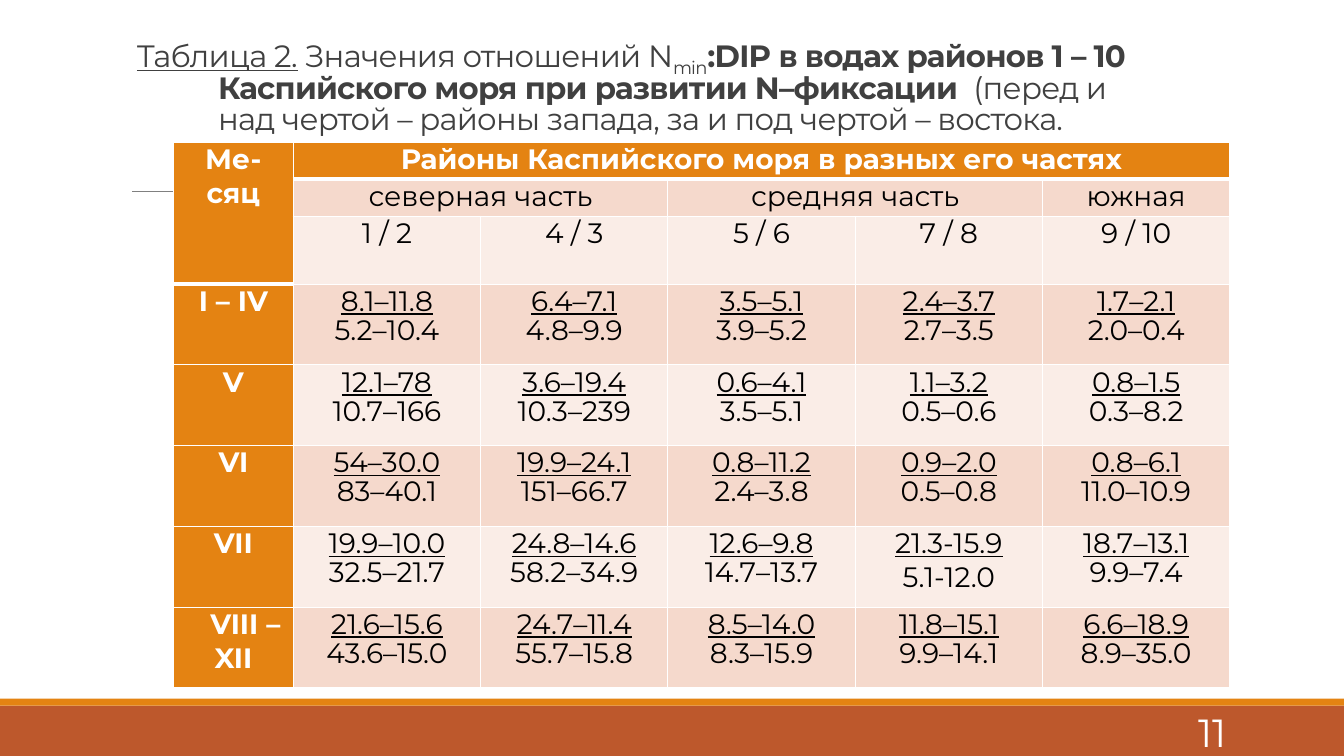
from lxml.etree import SubElement as Sub
from pptx import Presentation
from pptx.dml.color import RGBColor as RGB
from pptx.enum.shapes import MSO_CONNECTOR as Link, MSO_SHAPE as Shape
from pptx.enum.text import MSO_ANCHOR as Anchor, PP_ALIGN as Align
from pptx.oxml import parse_xml
from pptx.oxml.ns import nsdecls, qn
from pptx.util import Pt

WHITE = RGB(0xFF, 0xFF, 0xFF)
BLACK = RGB(0, 0, 0)
DARK = RGB(0x40, 0x40, 0x40)
GRAY = RGB(0x80, 0x80, 0x80)
RUST = RGB(0xBD, 0x58, 0x2C)
ORANGE = RGB(0xE4, 0x83, 0x12)
BANDS = [RGB(0xFA, 0xED, 0xE7), RGB(0xF5, 0xD9, 0xCC)]

FONT = "Montserrat"
HEAD = {"size": Pt(20), "bold": True}
BODY = {"size": Pt(20), "bold": False}
TITLE = {"size": Pt(22)}

PARTS = [("северная часть", 2), ("средняя часть", 2), ("южная", 1)]
PAIRS = ["1 / 2", "4 / 3", "5 / 6", "7 / 8", "9 / 10"]
# Each value: west over east
MONTHS = {
    "I – IV": ["8.1–11.8/5.2–10.4", "6.4–7.1/4.8–9.9", "3.5–5.1/3.9–5.2",
               "2.4–3.7/2.7–3.5", "1.7–2.1/2.0–0.4"],
    "V": ["12.1–78/10.7–166", "3.6–19.4/10.3–239", "0.6–4.1/3.5–5.1",
          "1.1–3.2/0.5–0.6", "0.8–1.5/0.3–8.2"],
    "VI": ["54–30.0/83–40.1", "19.9–24.1/151–66.7", "0.8–11.2/2.4–3.8",
           "0.9–2.0/0.5–0.8", "0.8–6.1/11.0–10.9"],
    "VII": ["19.9–10.0/32.5–21.7", "24.8–14.6/58.2–34.9",
            "12.6–9.8/14.7–13.7", "21.3-15.9/5.1-12.0",
            "18.7–13.1/9.9–7.4"],
    "VIII –XII": ["21.6–15.6/43.6–15.0", "24.7–11.4/55.7–15.8",
                  "8.5–14.0/8.3–15.9", "11.8–15.1/9.9–14.1",
                  "6.6–18.9/8.9–35.0"],
}


def add_run(para, text, color, style, **more):
    run = para.add_run()
    run.text = text
    run.font.name = FONT
    run.font.color.rgb = color
    for key, val in {**style, **more}.items():
        setattr(run.font, key, val)
    return run


def add_box(slide, box, anchor):
    frame = slide.shapes.add_textbox(*map(Pt, box)).text_frame
    frame.word_wrap = True
    frame.vertical_anchor = anchor
    return frame.paragraphs[0]


def add_title(slide, box):
    para = add_box(slide, box, Anchor.BOTTOM)
    para.line_spacing = 0.85
    props = para._p.get_or_add_pPr()
    props.set("marL", str(Pt(58)))
    props.set("indent", str(-Pt(58)))
    lines = [
        [("Таблица 2.", {"underline": True}),
         (" Значения отношений N", {}), ("min", {"sub": True}),
         (":DIP в водах районов 1 – 10", {"bold": True})],
        [("Каспийского моря при развитии N–фиксации ", {"bold": True}),
         (" (перед и", {})],
        [("над чертой – районы запада, за и под чертой – востока.", {})],
    ]
    for num, line in enumerate(lines):
        if num:
            para.add_line_break()
        for text, look in line:
            sub = look.pop("sub", False)
            props = add_run(para, text, DARK, TITLE, **look)._r.get_or_add_rPr()
            props.set("spc", "-50")
            if sub:
                props.set("baseline", "-25000")


def add_rule(slide, left, top, width):
    line = slide.shapes.add_connector(
        Link.STRAIGHT, Pt(left), Pt(top), Pt(left + width), Pt(top))
    line.line.color.rgb = GRAY
    line.line.width = Pt(0.5)
    Sub(line._element.spPr, qn("a:effectLst"))


def add_footer(slide, box, number):
    left, top, width, height = box
    for y, deep, color in [(top + 5, height - 5, RUST), (top, 5, ORANGE)]:
        bar = slide.shapes.add_shape(
            Shape.RECTANGLE, Pt(left), Pt(y), Pt(width), Pt(deep))
        bar.shadow.inherit = False
        bar.fill.solid()
        bar.fill.fore_color.rgb = color
        bar.line.fill.background()
    para = add_box(slide, (left + 780, top + 9, 103, 29), Anchor.MIDDLE)
    para.alignment = Align.RIGHT
    add_run(para, number, WHITE, {"size": Pt(28)})


def set_edges(cell, thick):
    props = cell._tc.get_or_add_tcPr()
    for pos, side in enumerate("LRTB"):
        wide = Pt(3 if thick and side == "B" else 1)
        props.insert(pos, parse_xml(
            f'<a:ln{side} {nsdecls("a")} w="{wide}"><a:solidFill>'
            f'<a:srgbClr val="{WHITE}"/></a:solidFill></a:ln{side}>'))


def fill_cell(cell, text, color, style):
    # A slash without spaces parts the upper value from the lower
    lines = text.split("/") if " / " not in text else [text]
    frame = cell.text_frame
    for num, line in enumerate(lines):
        para = frame.add_paragraph() if num else frame.paragraphs[0]
        para.alignment = Align.CENTER
        if num and "–" in line:
            para.line_spacing = 0.8
        add_run(para, line, color, style,
                underline=len(lines) > 1 and num == 0)


def add_grid(slide, box):
    cols = [85.5] + [133.8] * len(PAIRS)
    rows = [26.5, 26.5, 48.5] + [57.7] * len(MONTHS)
    grid = slide.shapes.add_table(
        len(rows), len(cols), *map(Pt, box)).table
    for col, width in zip(grid.columns, cols):
        col.width = Pt(width)
    for row, height in zip(grid.rows, rows):
        row.height = Pt(height)

    # Fills, margins and borders
    for r in range(len(rows)):
        for c in range(len(cols)):
            cell = grid.cell(r, c)
            cell.margin_left = cell.margin_right = Pt(5.4)
            cell.margin_top = cell.margin_bottom = 0
            cell.fill.solid()
            head = r == 0 or c == 0
            cell.fill.fore_color.rgb = ORANGE if head else BANDS[r % 2]
            set_edges(cell, r == 0 or (c == 0 and r < 3))

    # Header rows
    grid.cell(0, 0).merge(grid.cell(2, 0))
    grid.cell(0, 1).merge(grid.cell(0, len(PAIRS)))
    fill_cell(grid.cell(0, 0), "Ме-сяц", WHITE, HEAD)
    fill_cell(grid.cell(0, 1), "Районы Каспийского моря в разных его частях",
              WHITE, HEAD)
    c = 1
    for text, span in PARTS:
        if span > 1:
            grid.cell(1, c).merge(grid.cell(1, c + span - 1))
        fill_cell(grid.cell(1, c), text, BLACK, BODY)
        c += span
    for c, text in enumerate(PAIRS, 1):
        fill_cell(grid.cell(2, c), text, BLACK, BODY)

    # Month rows
    for r, (month, values) in enumerate(MONTHS.items(), 3):
        fill_cell(grid.cell(r, 0), month, WHITE, HEAD)
        for c, text in enumerate(values, 1):
            fill_cell(grid.cell(r, c), text, BLACK, BODY)
    last = grid.cell(len(rows) - 1, 0).text_frame.paragraphs[0]
    last._p.get_or_add_pPr().set("indent", str(Pt(17)))


def main():
    deck = Presentation()
    deck.slide_width, deck.slide_height = Pt(960), Pt(540)
    slide = deck.slides.add_slide(deck.slide_layouts[6])
    add_footer(slide, (0, 499, 960, 41), "11")
    add_rule(slide, 94.5, 136.8, 784)
    add_title(slide, (90.7, 3, 792, 98.5))
    add_grid(slide, (124, 101.5, 754.5, 390))
    deck.save("out.pptx")


if __name__ == "__main__":
    main()
